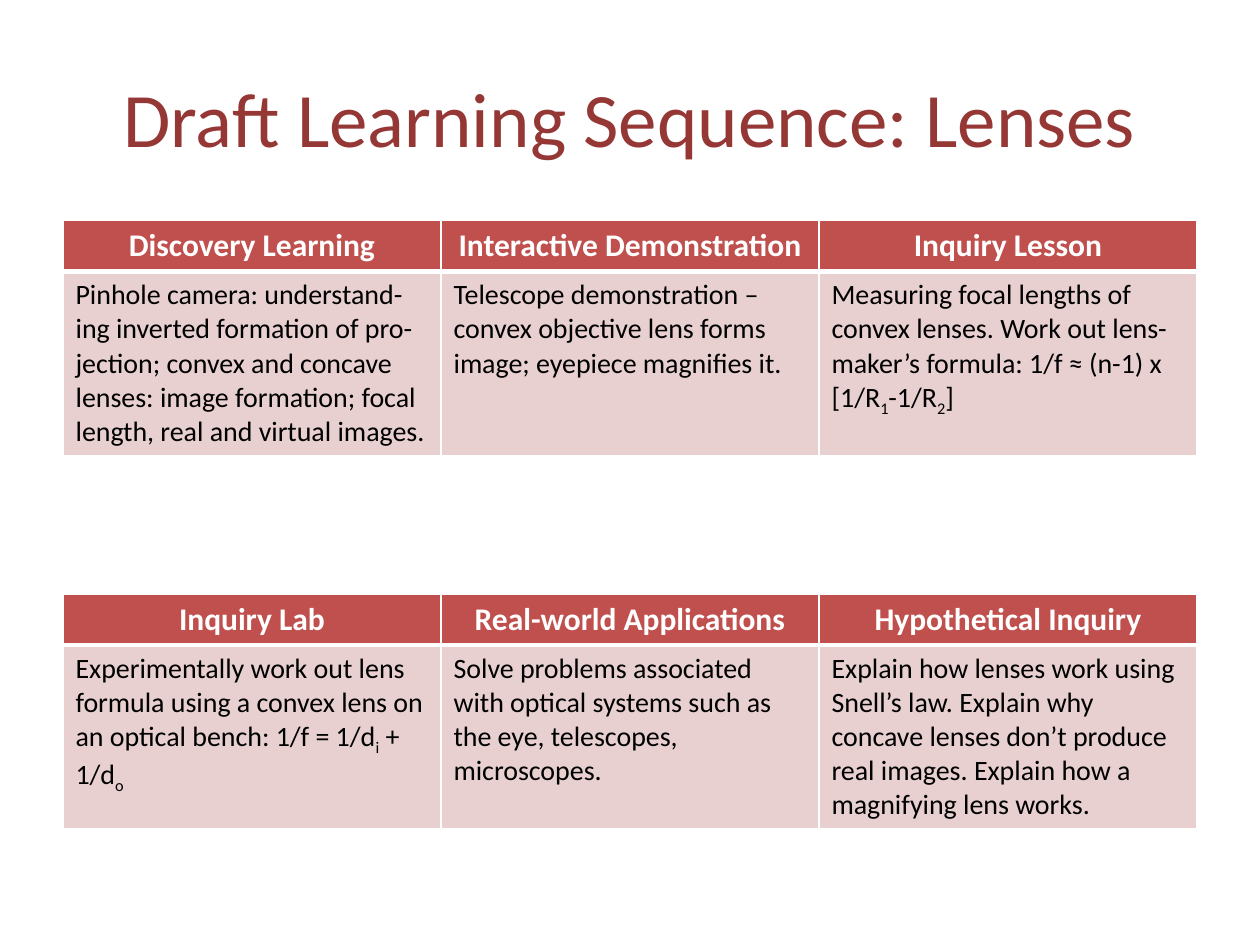
from lxml.etree import SubElement
from pptx import Presentation
from pptx.dml.color import RGBColor
from pptx.enum.text import MSO_ANCHOR as Anchor, PP_ALIGN as Align
from pptx.oxml.ns import qn
from pptx.util import Pt

FONT = "Calibri"
WHITE, BLACK = "FFFFFF", "000000"
TITLE_RED, HEADER_RED, BODY_PINK = "953735", "C0504D", "E8D0D0"
LEFT, WIDTH = 36, 648
HEADER_HEIGHT, BODY_HEIGHT = 29.2, 103.3

FIRST_STAGES = [
    ("Discovery Learning",
     "Pinhole camera: understand-ing inverted formation of pro-jection; convex and "
     "concave lenses: image formation; focal length, real and virtual images."),
    ("Interactive Demonstration",
     "Telescope demonstration – convex objective lens forms image; eyepiece magnifies it."),
    ("Inquiry Lesson",
     "Measuring focal lengths of convex lenses. Work out lens-maker’s formula: "
     "1/f ≈ (n-1) x [1/R_1_-1/R_2_]"),
]
LAST_STAGES = [
    ("Inquiry Lab",
     "Experimentally work out lens formula using a convex lens on an optical bench: "
     "1/f = 1/d_i_ + 1/d_o_"),
    ("Real-world Applications",
     "Solve problems associated with optical systems such as the eye, telescopes, "
     "microscopes."),
    ("Hypothetical Inquiry",
     "Explain how lenses work using Snell’s law. Explain why concave lenses don’t "
     "produce real images. Explain how a magnifying lens works."),
]


def rgb(value):
    """Turn a hex string into a colour."""
    return RGBColor.from_string(value)


def write(tf, text, size=16, color=BLACK, bold=False, align=Align.LEFT):
    """Write one paragraph, with text between underscores as subscript."""
    p = tf.paragraphs[0]
    p.alignment = align
    for i, part in enumerate(text.split("_")):
        if not part:
            continue
        r = p.add_run()
        r.text = part
        r.font.name, r.font.size, r.font.bold = FONT, Pt(size), bold
        r.font.color.rgb = rgb(color)
        if i % 2:
            r.font._element.set("baseline", "-25000")


def style_cell(cell, fill, top=1, bottom=1):
    """Give a cell its white borders and its fill."""
    tc_pr = cell._tc.get_or_add_tcPr()
    for side, width in zip("LRTB", (1, 1, top, bottom)):
        ln = SubElement(tc_pr, qn(f"a:ln{side}"), w=str(Pt(width)))
        solid = SubElement(ln, qn("a:solidFill"))
        SubElement(solid, qn("a:srgbClr"), val=WHITE)
    cell.fill.solid()
    cell.fill.fore_color.rgb = rgb(fill)


def add_title(s, text):
    """Place and write the slide title."""
    sp = s.shapes.title
    sp.left, sp.top, sp.width, sp.height = Pt(LEFT), Pt(21.6), Pt(WIDTH), Pt(90)
    sp.text_frame.vertical_anchor = Anchor.MIDDLE
    write(sp.text_frame, text, size=44, color=TITLE_RED, align=Align.CENTER)


def add_stages(s, top, stages):
    """Add a table with one column for each learning stage."""
    height = HEADER_HEIGHT + BODY_HEIGHT
    table = s.shapes.add_table(2, len(stages), Pt(LEFT), Pt(top),
                               Pt(WIDTH), Pt(height)).table
    table.horz_banding = False
    table.rows[0].height, table.rows[1].height = Pt(HEADER_HEIGHT), Pt(BODY_HEIGHT)
    for col, (name, activity) in enumerate(stages):
        header, body = table.cell(0, col), table.cell(1, col)
        style_cell(header, HEADER_RED, bottom=3)
        write(header.text_frame, name, size=18, color=WHITE, bold=True,
              align=Align.CENTER)
        style_cell(body, BODY_PINK, top=3)
        write(body.text_frame, activity)


def main():
    """Build the slide and save it."""
    prs = Presentation()
    prs.slide_width, prs.slide_height = Pt(720), Pt(540)
    s = prs.slides.add_slide(prs.slide_layouts[5])
    add_title(s, "Draft Learning Sequence: Lenses")
    add_stages(s, 126, FIRST_STAGES)
    add_stages(s, 339.4, LAST_STAGES)
    prs.save("out.pptx")


if __name__ == "__main__":
    main()
